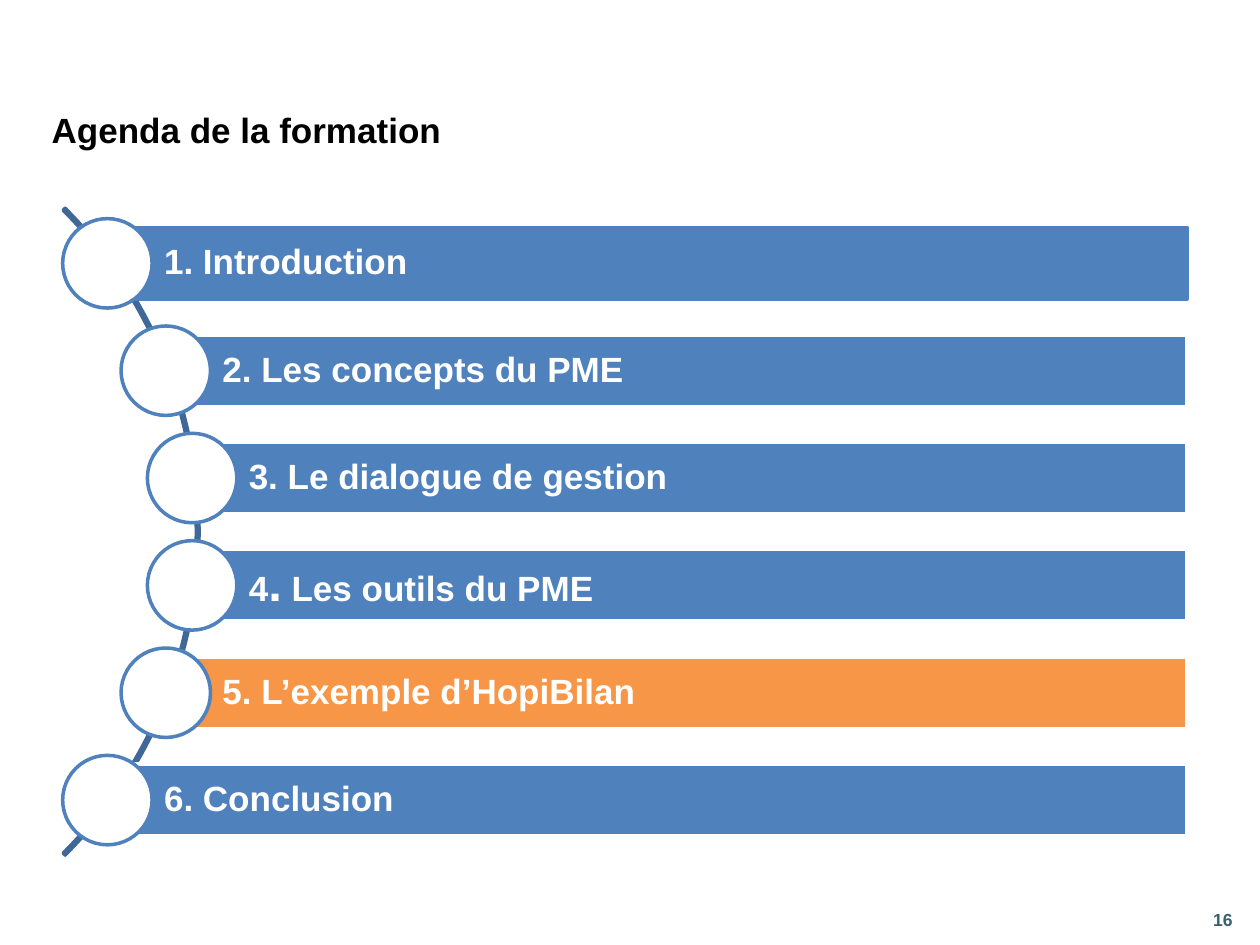
from math import sqrt
from pptx import Presentation
from pptx.dml.color import RGBColor
from pptx.enum.shapes import MSO_SHAPE
from pptx.enum.text import MSO_ANCHOR, PP_ALIGN
from pptx.util import Inches, Pt

ARC, BAR, DOT = MSO_SHAPE.BLOCK_ARC, MSO_SHAPE.RECTANGLE, MSO_SHAPE.OVAL
MID, LEFT = MSO_ANCHOR.MIDDLE, PP_ALIGN.LEFT
BLUE, ORANGE, WHITE = "4F81BD", "F79646", "FFFFFF"


def draw(kind, box, fill, line):
    shape = slide.shapes.add_shape(kind, *map(Inches, box))
    shape.shadow.inherit = False
    if fill:
        shape.fill.solid()
        shape.fill.fore_color.rgb = RGBColor.from_string(fill)
    else:
        shape.fill.background()
    shape.line.color.rgb = RGBColor.from_string(line)
    shape.line.width = Pt(2)
    return shape


def write(shape, parts, color, pad):
    frame = shape.text_frame
    form = {"word_wrap": True, "vertical_anchor": MID,
            "margin_left": Inches(pad[0]), "margin_right": Inches(pad[1]),
            "margin_top": Inches(pad[2]), "margin_bottom": Inches(pad[2])}
    for name, value in form.items():
        setattr(frame, name, value)
    para = frame.paragraphs[0]
    para.alignment = LEFT
    for text, size in parts:
        run = para.add_run()
        run.text = text
        for name, value in {"name": "Arial", "size": Pt(size), "bold": True}.items():
            setattr(run.font, name, value)
        run.font.color.rgb = RGBColor.from_string(color)
    return para


deck = Presentation()
deck.slide_width, deck.slide_height = Inches(10), Inches(7.5)
slide = deck.slides.add_slide(deck.slide_layouts[5])

# Title
title = slide.shapes.title
place = {"left": 0.31, "top": 0.78, "width": 9.55, "height": 0.49}
for name, value in place.items():
    setattr(title, name, Inches(value))
write(title, [("Agenda de la formation", 20)], "000000", (0.1, 0.1, 0.05))

# Page number
page = slide.shapes.add_textbox(*map(Inches, (9.53, 7.1, 0.47, 0.4)))
write(page, [("16", 10)], "36616C", (0.1, 0.1, 0.05))

# Arc behind the agenda
mid_x, mid_y, size = -2.05, 4.22, 7.26
arc = draw(ARC, (mid_x - size / 2, mid_y - size / 2, size, size), None, "3F6797")
for i, value in enumerate((189, 27, 0.003)):
    arc.adjustments[i] = value

# Agenda bars, each starting at the centre of a dot on the arc
items = [
    ([("1. Introduction", 20)], BLUE, BLUE),
    ([("2. Les concepts du PME", 20)], BLUE, WHITE),
    ([("3. Le dialogue de gestion", 20)], BLUE, WHITE),
    ([("4", 20), (".", 28), (" Les outils du PME", 20)], BLUE, WHITE),
    ([("5. L’exemple d’HopiBilan", 20)], ORANGE, WHITE),
    ([("6. Conclusion", 20)], BLUE, WHITE),
]
right, high, wide, step, ring = 9.42, 0.57, 0.71, 0.852, 3.6
for i, (parts, fill, line) in enumerate(items):
    drop = (i - (len(items) - 1) / 2) * step
    x, y = mid_x + sqrt(ring ** 2 - drop ** 2), mid_y + drop
    bar = draw(BAR, (x, y - high / 2, right - x, high), fill, line)
    para = write(bar, parts, WHITE, (0.45, 0.06, 0.06))
    para.line_spacing = 0.9
    draw(DOT, (x - wide / 2, y - wide / 2, wide, wide), WHITE, BLUE)

deck.save("out.pptx")
